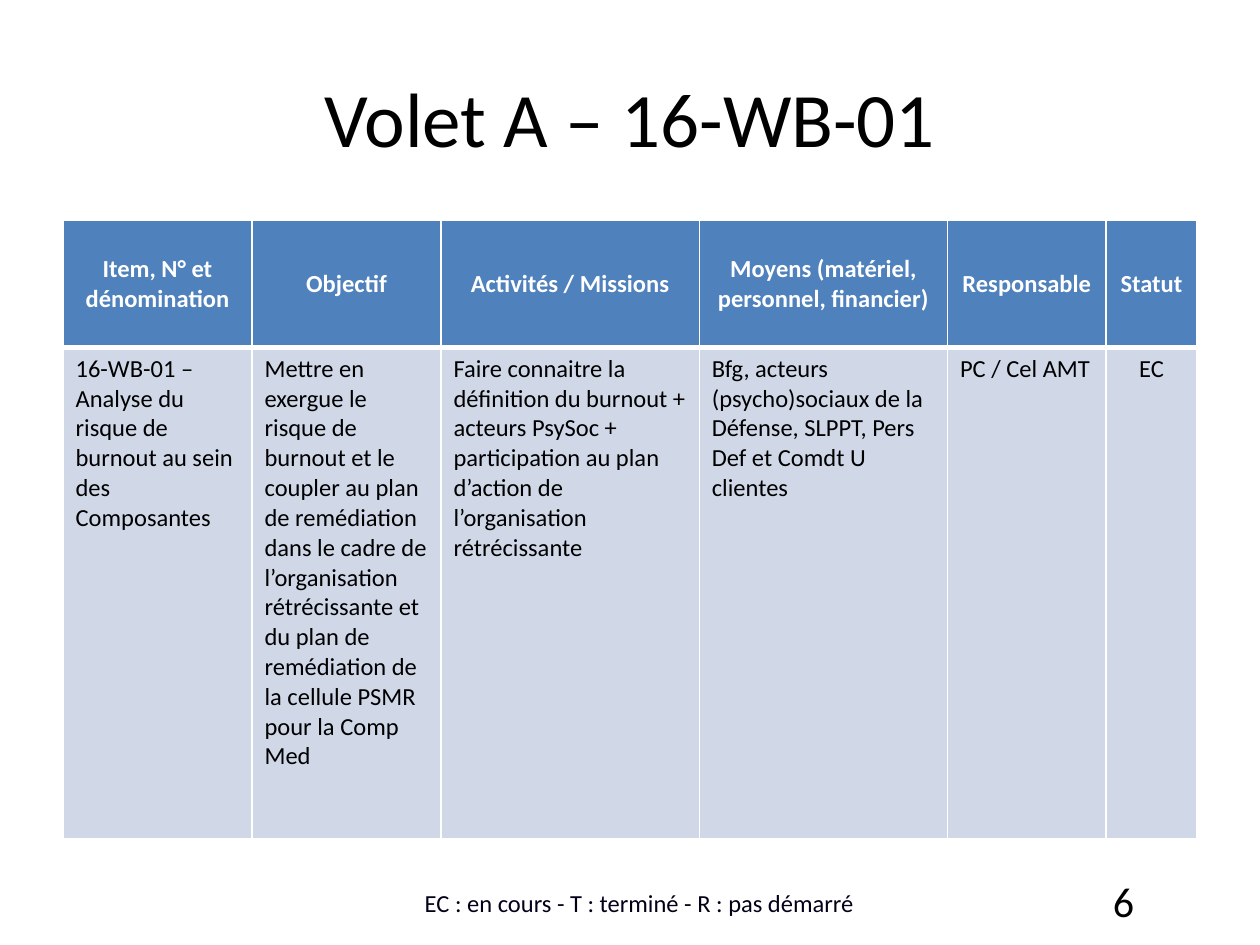
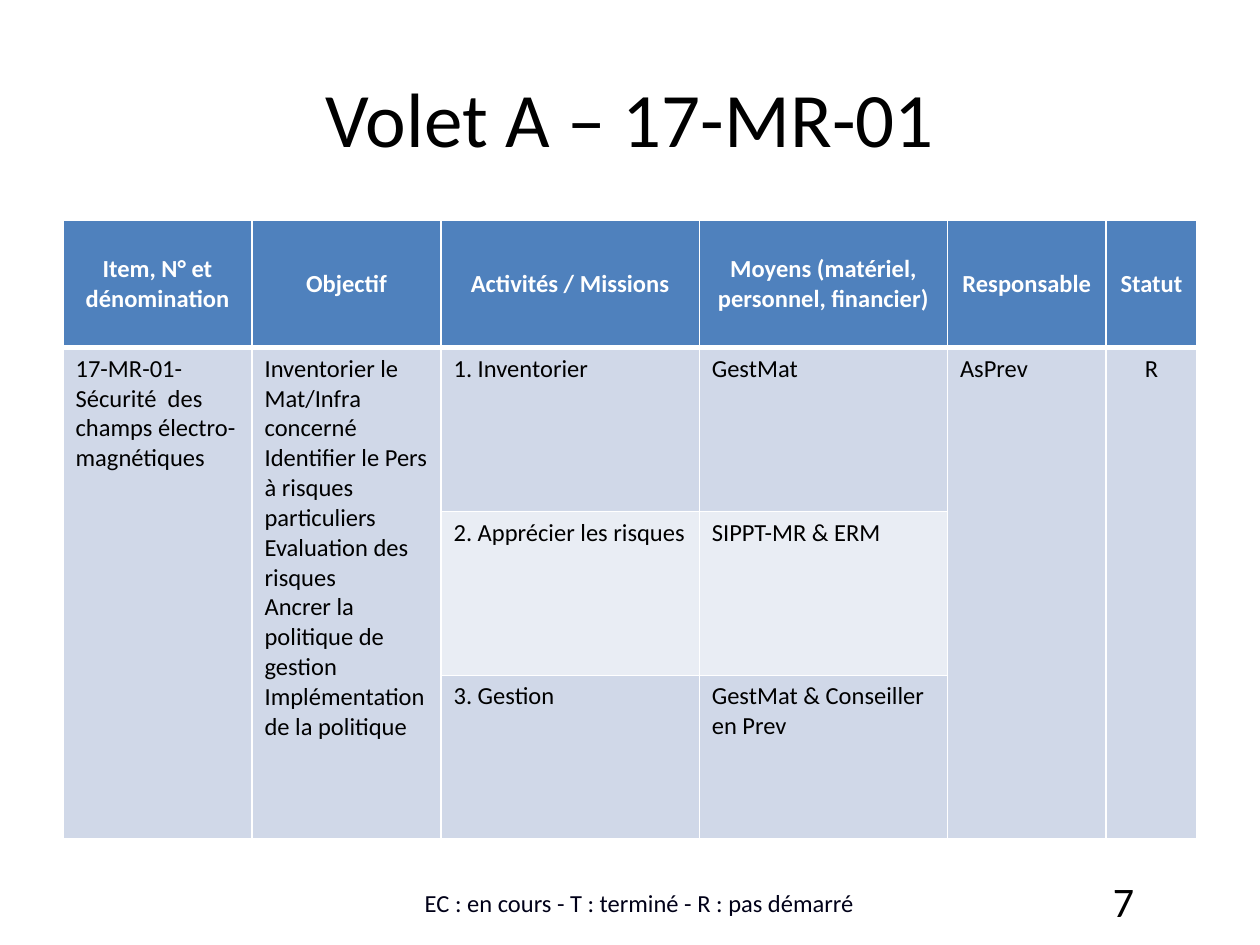
from lxml import etree
from pptx import Presentation
from pptx.dml.color import RGBColor
from pptx.enum.text import MSO_ANCHOR, PP_ALIGN
from pptx.oxml.ns import qn
from pptx.util import Inches, Pt

LEFT, CENTER, RIGHT = PP_ALIGN.LEFT, PP_ALIGN.CENTER, PP_ALIGN.RIGHT
TOP, MIDDLE, BOTTOM = MSO_ANCHOR.TOP, MSO_ANCHOR.MIDDLE, MSO_ANCHOR.BOTTOM

FONT = "Calibri"
BLACK, WHITE, LEGEND_INK = "000000", "FFFFFF", "000018"
HEADER_FILL = "4F81BD"
BAND_FILLS = ["E9EDF4", "D0D8E8"]  # even rows, odd rows

COLUMN_WIDTHS = [1.5, 1.5, 2.05, 1.97, 1.26, 0.72]
HEADER_HEIGHT, BODY_HEIGHT = 1.01, 3.9
STATUS_COLUMN = 5
HEADERS = [
    "Item, N° et dénomination", "Objectif", "Activités / Missions",
    "Moyens (matériel, personnel, financier)", "Responsable", "Statut",
]
LEGEND = "EC : en cours - T : terminé - R : pas démarré"
FIRST_PAGE_NUMBER = 6

# None continues the cell above it.
SHEETS = [
    ("Volet A – 16-WB-01", [[
        "16-WB-01 – Analyse du risque de burnout au sein des Composantes",
        "Mettre en exergue le risque de burnout et le coupler au plan de "
        "remédiation dans le cadre de l’organisation rétrécissante et du plan "
        "de remédiation de la cellule PSMR pour la Comp Med",
        "Faire connaitre la définition du burnout + acteurs PsySoc + "
        "participation au plan d’action de l’organisation rétrécissante",
        "Bfg, acteurs (psycho)sociaux de la Défense, SLPPT, Pers Def et "
        "Comdt U clientes",
        "PC / Cel AMT", "EC",
    ]]),
    ("Volet A – 17-MR-01", [
        ["17-MR-01-Sécurité  des champs électro-magnétiques",
         "Inventorier le Mat/Infra concerné\n"
         "Identifier le Pers à risques particuliers\n"
         "Evaluation des risques\n"
         "Ancrer la politique de gestion\n"
         "Implémentation de la politique",
         "1. Inventorier", "GestMat", "AsPrev", "R"],
        [None, None, "2. Apprécier les risques", "SIPPT-MR & ERM", None, None],
        [None, None, "3. Gestion", "GestMat & Conseiller en Prev", None, None],
    ]),
]


def write(frame, text, size, color, align, bold=False):
    """Fill a text frame or cell frame with evenly styled paragraphs."""
    frame.text = text
    for paragraph in frame.paragraphs:
        paragraph.alignment = align
        paragraph.font.name = FONT
        paragraph.font.size = Pt(size)
        paragraph.font.bold = bold
        paragraph.font.color.rgb = RGBColor.from_string(color)


def add_borders(cell, row):
    """White 1 pt borders, with a 3 pt rule between header and body."""
    widths = {"L": 1, "R": 1, "T": 3 if row == 1 else 1, "B": 3 if row == 0 else 1}
    properties = cell._tc.get_or_add_tcPr()
    for side, width in widths.items():
        line = etree.SubElement(properties, qn(f"a:ln{side}"), w=str(Pt(width)))
        fill = etree.SubElement(line, qn("a:solidFill"))
        etree.SubElement(fill, qn("a:srgbClr"), val=WHITE)


deck = Presentation()
deck.slide_width, deck.slide_height = Inches(10), Inches(7.5)

for number, (title, body) in enumerate(SHEETS, FIRST_PAGE_NUMBER):
    page = deck.slides.add_slide(deck.slide_layouts[6])

    rows = [HEADERS] + body
    table = page.shapes.add_table(
        len(rows), len(HEADERS), Inches(0.5), Inches(1.75),
        Inches(sum(COLUMN_WIDTHS)), Inches(HEADER_HEIGHT + BODY_HEIGHT)).table
    for column, width in zip(table.columns, COLUMN_WIDTHS):
        column.width = Inches(width)
    for row in table.rows:
        row.height = Inches(BODY_HEIGHT / len(body))
    table.rows[0].height = Inches(HEADER_HEIGHT)

    for r, texts in enumerate(rows):
        header = r == 0
        for c, text in enumerate(texts):
            cell = table.cell(r, c)
            add_borders(cell, r)
            cell.fill.solid()
            cell.fill.fore_color.rgb = RGBColor.from_string(
                HEADER_FILL if header else BAND_FILLS[r % 2])
            cell.vertical_anchor = MIDDLE if header else TOP
            if text is not None:
                write(cell.text_frame, text, 14, WHITE if header else BLACK,
                      CENTER if header or c == STATUS_COLUMN else LEFT, header)

    for c, text in enumerate(rows[-1]):
        if text is None:
            table.cell(1, c).merge(table.cell(len(body), c))

    for text, place, size, color, align, anchor in [
        (title, (0.5, 0.3, 9, 1.25), 44, BLACK, CENTER, MIDDLE),
        (str(number), (7.17, 6.95, 1.93, 0.4), 24, BLACK, RIGHT, MIDDLE),
        (LEGEND, (2.32, 6.95, 5.51, 0.38), 14, LEGEND_INK, CENTER, BOTTOM),
    ]:
        box = page.shapes.add_textbox(*map(Inches, place))
        box.text_frame.word_wrap = True
        box.text_frame.vertical_anchor = anchor
        write(box.text_frame, text, size, color, align)

deck.save("out.pptx")
